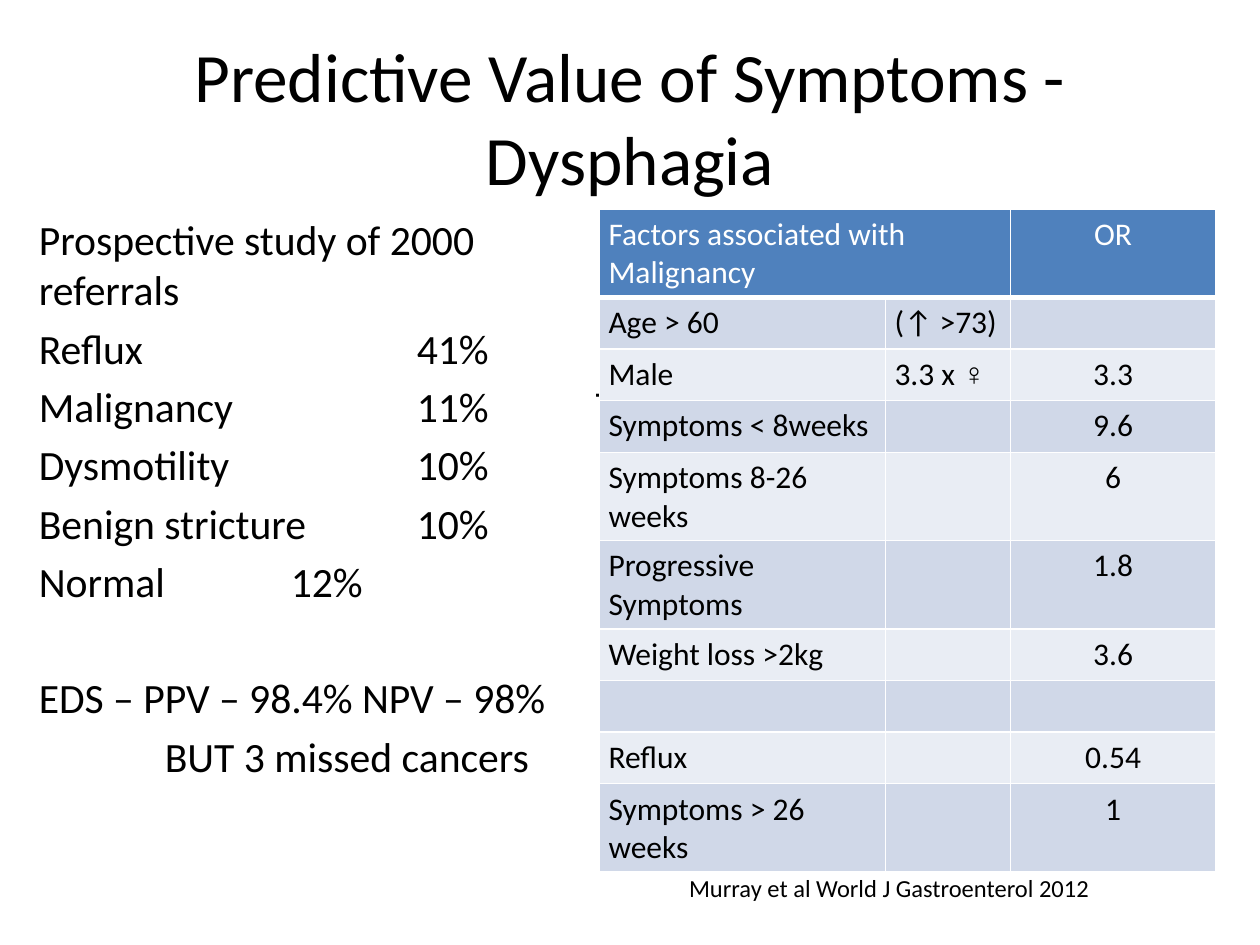
from dataclasses import dataclass

from lxml import etree
from pptx import Presentation
from pptx import util as u
from pptx.dml.color import RGBColor
from pptx.enum import text
from pptx.oxml.ns import qn


@dataclass(frozen=True)
class Theme:
    font: str = "Calibri"
    symbol_font: str = "Times New Roman"
    ink: str = "000000"
    white: str = "FFFFFF"
    header: str = "4F81BD"
    bands: tuple[str, str] = ("D0D8E8", "E9EDF4")
    title: float = 39.6
    body: float = 23.8
    table: float = 18
    source: float = 14
    rule: float = 1
    header_rule: float = 3


@dataclass(frozen=True)
class Area:
    left: float
    top: float
    width: float
    height: float

    def lengths(self) -> list[u.Length]:
        return [u.Inches(n) for n in (self.left, self.top, self.width, self.height)]


@dataclass(frozen=True)
class Line:
    words: str
    before: float = 4.76


@dataclass(frozen=True)
class Factor:
    name: str = ""
    note: str = ""
    odds: str = ""
    height: float = 0.41
    symbol: str = ""


THEME = Theme()
LEFT, CENTER = text.PP_ALIGN.LEFT, text.PP_ALIGN.CENTER
TALL = 0.7
COLUMNS = (2.27, 0.99, 1.63)

FINDINGS = (
    Line("Prospective study of 2000 referrals"),
    Line("Reflux\t\t\t41%"),
    Line("Malignancy\t\t11%"),
    Line("Dysmotility\t\t10%"),
    Line("Benign stricture\t10%"),
    Line("Normal\t\t12%"),
    Line("EDS – PPV – 98.4% NPV – 98%", 38),
    Line("\tBUT 3 missed cancers"),
)

FACTORS = (
    Factor("Factors associated with Malignancy", odds="OR", height=TALL),
    Factor("Age > 60", "(↑ >73)"),
    Factor("Male", "3.3 x ", "3.3", symbol="♀"),
    Factor("Symptoms < 8weeks", odds="9.6"),
    Factor("Symptoms 8-26 weeks", odds="6", height=TALL),
    Factor("Progressive Symptoms", odds="1.8", height=TALL),
    Factor("Weight loss >2kg", odds="3.6"),
    Factor(),
    Factor("Reflux", odds="0.54"),
    Factor("Symptoms > 26 weeks", odds="1", height=TALL),
)


def add_span(para, words: str, size: float, color: str = THEME.ink, font: str = THEME.font) -> None:
    span = para.add_run()
    span.text = words
    span.font.size = u.Pt(size)
    span.font.name = font
    span.font.color.rgb = RGBColor.from_string(color)


def set_tabs(para) -> None:
    stops = etree.SubElement(para._p.get_or_add_pPr(), qn("a:tabLst"))
    for inch in (1, 2, 3):
        etree.SubElement(stops, qn("a:tab"), pos=str(u.Inches(inch)), algn="l")


def add_text(page, area: Area, lines: tuple[Line, ...], size: float, align=LEFT,
             anchor=text.MSO_ANCHOR.TOP, inset_top: float = 0.05) -> None:
    frame = page.shapes.add_textbox(*area.lengths()).text_frame
    frame.word_wrap = True
    frame.vertical_anchor = anchor
    frame.margin_top = u.Inches(inset_top)
    for index, line in enumerate(lines):
        para = frame.add_paragraph() if index else frame.paragraphs[0]
        para.alignment = align
        para.space_before = u.Pt(line.before)
        if "\t" in line.words:
            set_tabs(para)
        add_span(para, line.words, size)


def set_borders(cell, bottom: float) -> None:
    properties = cell._tc.get_or_add_tcPr()
    for side in ("L", "R", "T", "B"):
        width = bottom if side == "B" else THEME.rule
        edge = etree.SubElement(properties, qn(f"a:ln{side}"), w=str(u.Pt(width)))
        fill = etree.SubElement(edge, qn("a:solidFill"))
        etree.SubElement(fill, qn("a:srgbClr"), val=THEME.white)


def fill_cell(cell, words: str, symbol: str, align, is_header: bool, band: str) -> None:
    set_borders(cell, THEME.header_rule if is_header else THEME.rule)
    cell.fill.solid()
    cell.fill.fore_color.rgb = RGBColor.from_string(band)
    cell.margin_left = cell.margin_right = u.Inches(0.07)
    cell.margin_top = cell.margin_bottom = u.Inches(0.05)
    para = cell.text_frame.paragraphs[0]
    para.alignment = align
    para.font.size = u.Pt(THEME.table)
    color = THEME.white if is_header else THEME.ink
    if words:
        add_span(para, words, THEME.table, color)
    if symbol:
        add_span(para, symbol, THEME.table, color, THEME.symbol_font)


def add_factors(page, left: float, top: float) -> None:
    area = Area(left, top, sum(COLUMNS), sum(factor.height for factor in FACTORS))
    table = page.shapes.add_table(len(FACTORS), len(COLUMNS), *area.lengths()).table
    for column, width in zip(table.columns, COLUMNS):
        column.width = u.Inches(width)
    table.cell(0, 0).merge(table.cell(0, 1))
    for index, (row, factor) in enumerate(zip(table.rows, FACTORS)):
        row.height = u.Inches(factor.height)
        is_header = index == 0
        band = THEME.header if is_header else THEME.bands[(index - 1) % 2]
        entries = ((factor.name, "", LEFT), (factor.note, factor.symbol, LEFT),
                   (factor.odds, "", CENTER))
        for cell, (words, symbol, align) in zip(row.cells, entries):
            fill_cell(cell, words, symbol, align, is_header, band)


def main() -> None:
    deck = Presentation()
    deck.slide_width, deck.slide_height = u.Inches(10), u.Inches(7.5)
    page = deck.slides.add_slide(deck.slide_layouts[6])
    add_text(page, Area(0.5, 0.3, 9, 1.25), (Line("Predictive Value of Symptoms - Dysphagia", 0),),
             THEME.title, CENTER, text.MSO_ANCHOR.MIDDLE)
    add_text(page, Area(0.21, 1.65, 4.49, 4.63), FINDINGS, THEME.body)
    add_text(page, Area(4.62, 2, 4.69, 4.76), (Line("-", 0),), THEME.body, inset_top=0.9)
    add_factors(page, 4.76, 1.66)
    add_text(page, Area(5.37, 6.88, 4.28, 0.34),
             (Line("Murray et al World J Gastroenterol 2012", 0),), THEME.source)
    deck.save("out.pptx")


if __name__ == "__main__":
    main()
